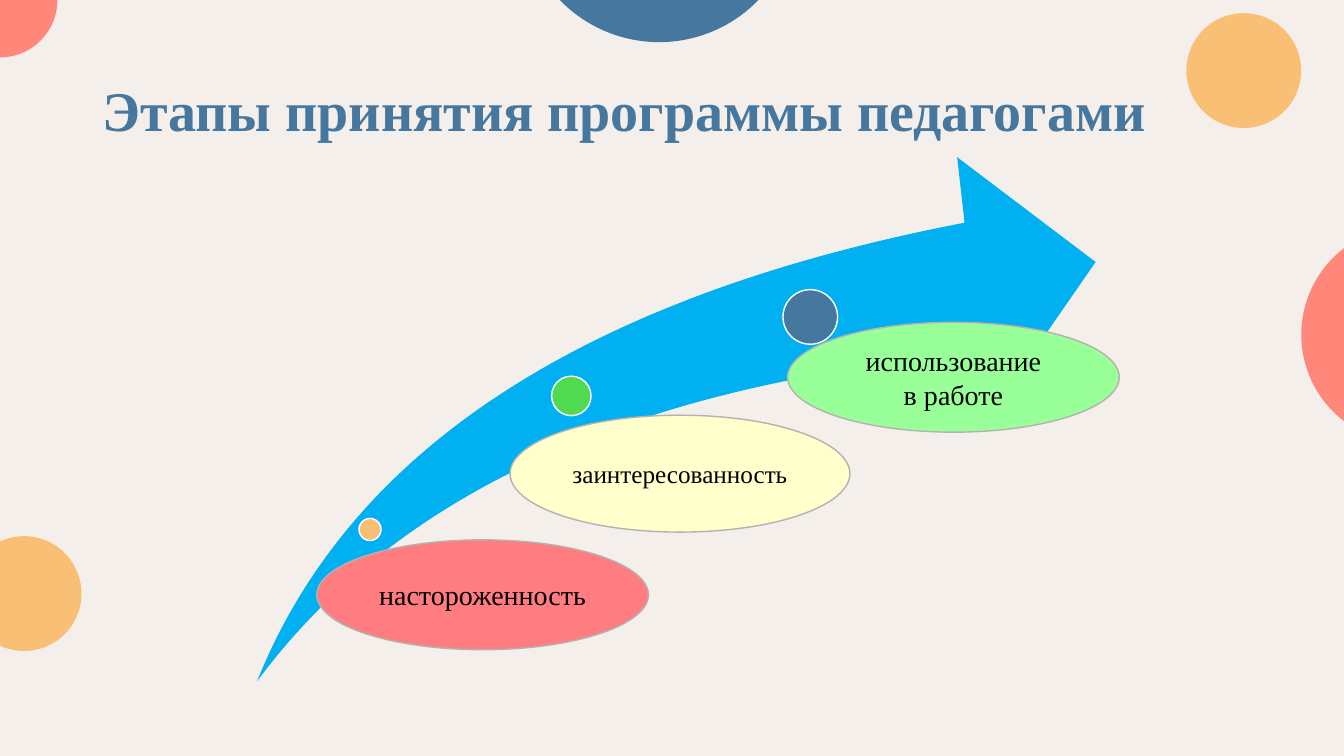
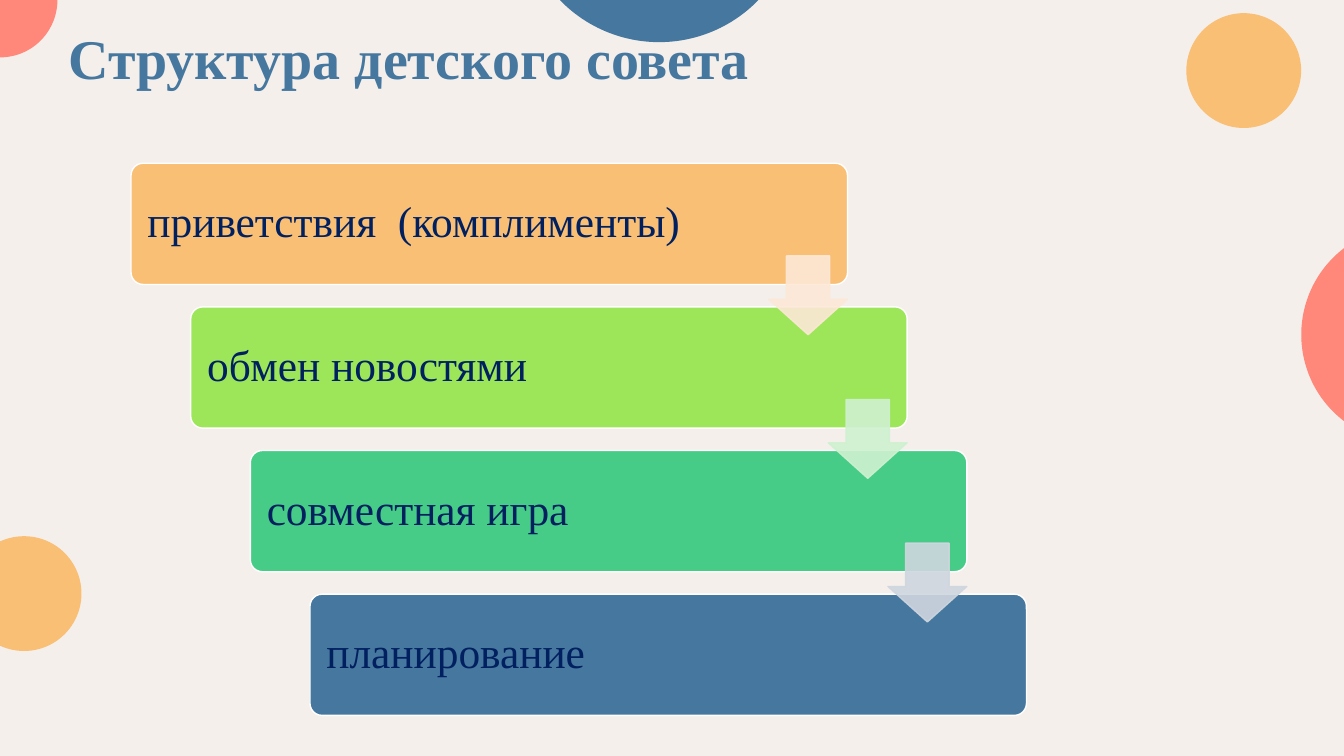
from lxml import etree
from pptx import Presentation
from pptx.dml.color import RGBColor
from pptx.enum.shapes import MSO_SHAPE as Preset
from pptx.enum.text import MSO_ANCHOR as Anchor, MSO_AUTO_SIZE as AutoSize, PP_ALIGN as Align
from pptx.oxml.ns import qn
from pptx.util import Pt

FONT = "Times New Roman"
CREAM = RGBColor(0xF4, 0xEF, 0xEB)
CORAL = RGBColor(0xFF, 0x88, 0x7A)
ORANGE = RGBColor(0xF9, 0xBF, 0x75)
BLUE = RGBColor(0x46, 0x77, 0x9F)
SKY = RGBColor(0x00, 0xB0, 0xF0)
GREEN = RGBColor(0x4F, 0xDA, 0x50)
RED = RGBColor(0xFF, 0x7C, 0x80)
PALE_YELLOW = RGBColor(0xFF, 0xFF, 0xCC)
PALE_GREEN = RGBColor(0x99, 0xFF, 0x99)
LIME = RGBColor(0x9D, 0xE6, 0x5A)
EMERALD = RGBColor(0x47, 0xCC, 0x88)
PEACH = RGBColor(0xFD, 0xE8, 0xD6)
MINT = RGBColor(0xCF, 0xF1, 0xD0)
MIST = RGBColor(0xCF, 0xD6, 0xDF)
GREY = RGBColor(0xB5, 0xB1, 0xAE)
NAVY = RGBColor(0x00, 0x20, 0x60)
BLACK = RGBColor(0, 0, 0)
WHITE = RGBColor(0xFF, 0xFF, 0xFF)

# left, top, diameter, colour
BACKGROUND_CIRCLES = [
    (-41, -41, 82, CORAL),
    (929.5, 161.3, 155.5, CORAL),
    (-23.8, 383, 82, ORANGE),
    (847.4, 9.4, 82, ORANGE),
    (372.2, -167.2, 197.3, BLUE),
]

ADOPTION_TITLE = "Этапы принятия программы педагогами"
SWOOSH = (183.6, 112.3, 599, 374.4)
MILESTONES = [
    (256.4, 370.3, 15.8, ORANGE),
    (394, 268.7, 28.2, GREEN),
    (559.3, 206.9, 39, BLUE),
]
# text, box, font size, colour
STAGES = [
    ("настороженность", (226.3, 385.6, 236.9, 78.5), 20, RED),
    ("заинтересованность", (364.3, 296.6, 242.8, 83.5), 18, PALE_YELLOW),
    ("использование\nв работе", (562.6, 230.2, 236.9, 78.5), 20, PALE_GREEN),
]

COUNCIL_TITLE = "Структура детского совета"
# text, colour, colour of the arrow to the next step
STEPS = [
    ("приветствия  (комплименты)", ORANGE, PEACH),
    ("обмен новостями", LIME, MINT),
    ("совместная игра", EMERALD, MIST),
    ("планирование", BLUE, None),
]
STEP_LEFT, STEP_TOP = 93.6, 116.6
STEP_WIDTH, STEP_HEIGHT = 511.8, 86.6
STEP_SHIFT, STEP_PITCH = 42.6, 102.6
ARROW_SIZE, ARROW_DROP = 56.3, 66.2


def add_shape(slide, preset, box, fill, line=None, adjustments=()):
    shape = slide.shapes.add_shape(preset, *map(Pt, box))
    shape.shadow.inherit = False
    for index, value in enumerate(adjustments):
        shape.adjustments[index] = value
    shape.fill.solid()
    shape.fill.fore_color.rgb = fill
    if line is None:
        shape.line.fill.background()
    else:
        shape.line.color.rgb = line
        shape.line.width = Pt(1)
    return shape


def set_text(shape, text, size, color, align, bold=False, line_spacing=1.0):
    frame = shape.text_frame
    frame.text = text
    frame.word_wrap = True
    frame.auto_size = AutoSize.NONE
    frame.vertical_anchor = Anchor.MIDDLE
    for paragraph in frame.paragraphs:
        paragraph.alignment = align
        paragraph.line_spacing = line_spacing
        for run in paragraph.runs:
            run.font.name = FONT
            run.font.size = Pt(size)
            run.font.bold = bold
            run.font.color.rgb = color


def set_opacity(shape, percent):
    """Apply one opacity to both the fill and the outline."""
    for color in shape.element.spPr.iter(qn("a:srgbClr")):
        etree.SubElement(color, qn("a:alpha")).set("val", str(percent * 1000))


def add_slide(presentation, layout, title, left, top):
    slide = presentation.slides.add_slide(layout)
    shape = slide.shapes.title
    shape.left, shape.top, shape.width, shape.height = map(Pt, (left, top, 828, 104.4))
    set_text(shape, title, 40, BLUE, Align.LEFT, bold=True, line_spacing=0.9)
    return slide


def decorate_layout(layout, slide):
    """Draw the circles on a slide, then move them to the layout it shares."""
    layout.background.fill.solid()
    layout.background.fill.fore_color.rgb = CREAM
    for left, top, size, color in BACKGROUND_CIRCLES:
        circle = add_shape(slide, Preset.OVAL, (left, top, size, size), color)
        layout.shapes.element.append(circle.element)


def draw_adoption(slide):
    add_shape(slide, Preset.SWOOSH_ARROW, SWOOSH, SKY, adjustments=(0.25, 0.25))
    for left, top, size, color in MILESTONES:
        add_shape(slide, Preset.OVAL, (left, top, size, size), color, WHITE)
    for text, box, size, color in STAGES:
        stage = add_shape(slide, Preset.OVAL, box, color, GREY)
        set_text(stage, text, size, BLACK, Align.CENTER)


def draw_council(slide):
    arrows = []
    for index, (text, color, arrow_color) in enumerate(STEPS):
        left = STEP_LEFT + index * STEP_SHIFT
        top = STEP_TOP + index * STEP_PITCH
        step = add_shape(slide, Preset.ROUNDED_RECTANGLE,
                         (left, top, STEP_WIDTH, STEP_HEIGHT), color, WHITE, (0.1,))
        set_text(step, text, 31, NAVY, Align.LEFT, line_spacing=0.9)
        step.text_frame.margin_left = Pt(9.2)
        if arrow_color is not None:
            arrow_left = left + STEP_WIDTH - ARROW_SIZE
            arrows.append(((arrow_left, top + ARROW_DROP, ARROW_SIZE, ARROW_SIZE), arrow_color))
    for box, color in arrows:
        arrow = add_shape(slide, Preset.DOWN_ARROW, box, color, color, (0.55, 0.45))
        set_opacity(arrow, 90)


def main():
    presentation = Presentation()
    presentation.slide_width, presentation.slide_height = Pt(960), Pt(540)
    layout = presentation.slide_layouts.get_by_name("Title Only")
    adoption = add_slide(presentation, layout, ADOPTION_TITLE, 66, 28.8)
    decorate_layout(layout, adoption)
    draw_adoption(adoption)
    draw_council(add_slide(presentation, layout, COUNCIL_TITLE, 41.8, -8.6))
    presentation.save("out.pptx")


if __name__ == "__main__":
    main()
